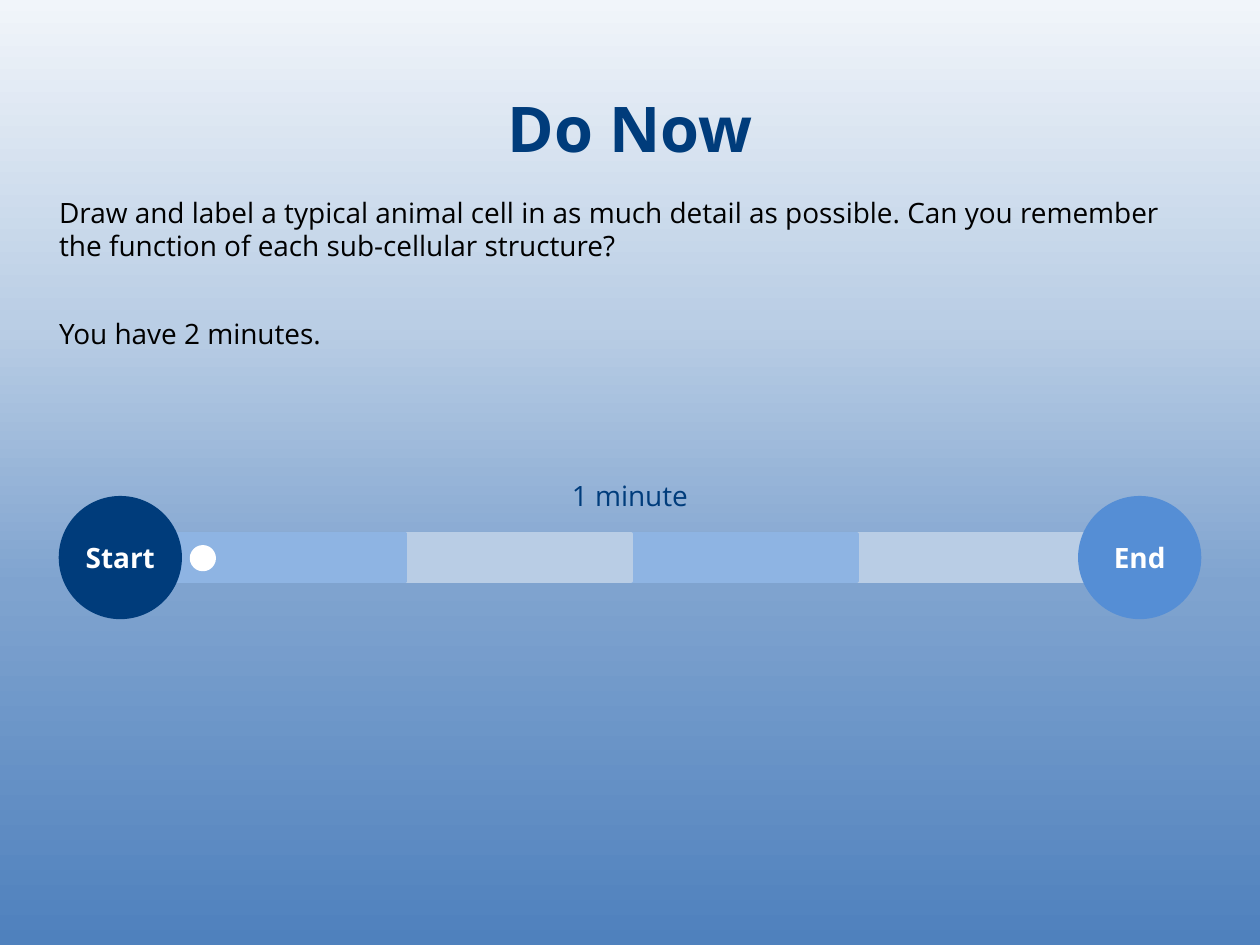
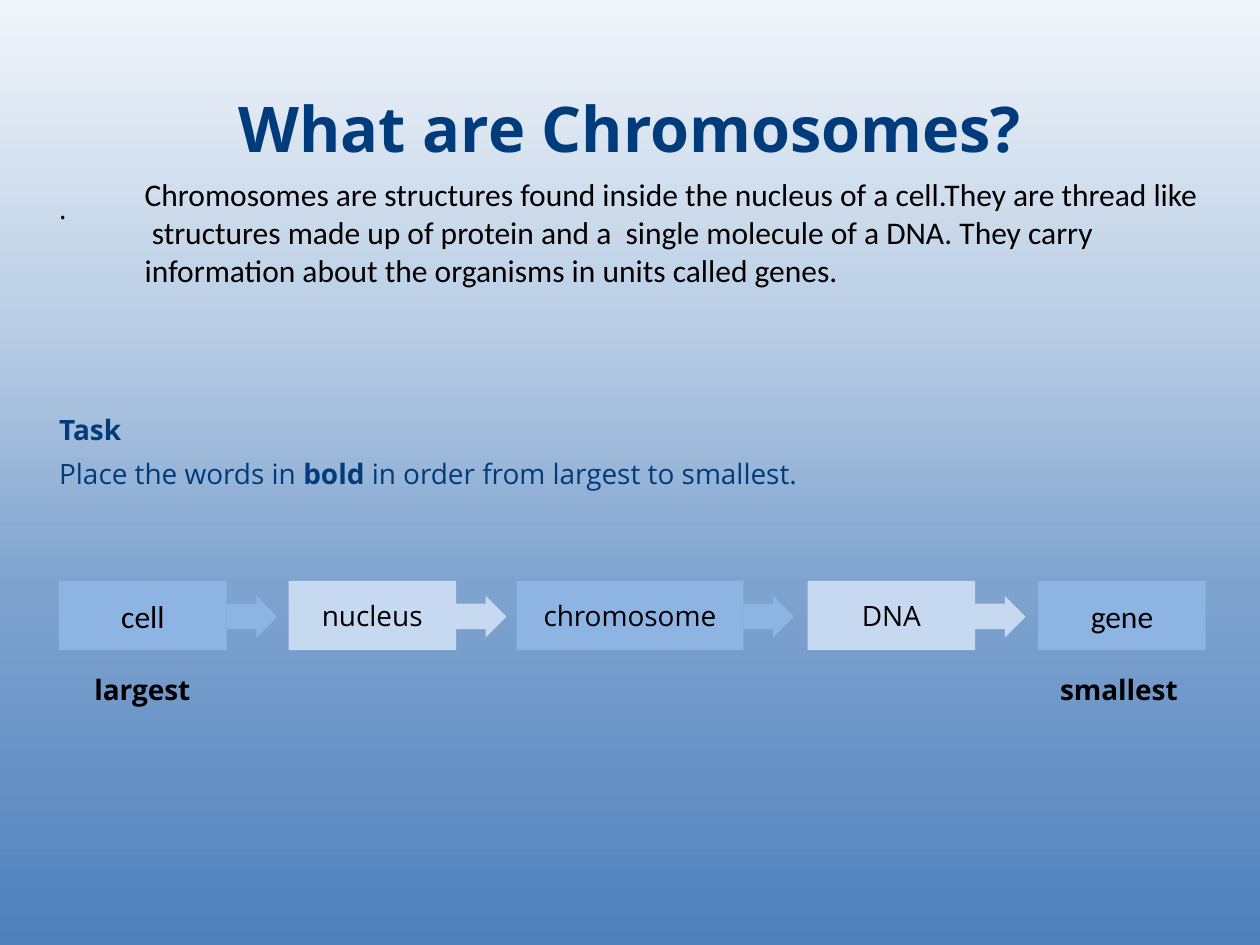
from lxml import etree
from pptx import Presentation
from pptx.dml.color import RGBColor
from pptx.enum import shapes, text
from pptx.oxml.ns import qn
from pptx.util import Inches, Pt

HUES = {
    "navy": "003C7B", "blue": "558ED5", "sky": "8EB4E3", "mist": "B9CDE5",
    "pale": "C6D9F1", "white": "FFFFFF", "black": "000000",
}
STOPS = [(0, "F1F5FA"), (34, "BACEE5"), (62, "7FA3CF"), (100, "4F81BD")]
SANS, PLAIN = "Open Sans", "Calibri"
FORM = shapes.MSO_SHAPE
MID = text.PP_ALIGN.CENTER


def hue(name):
    return RGBColor.from_string(HUES[name])


def paint(master):
    """Give every slide the same vertical gradient."""
    fill = master.background.fill
    fill.gradient()
    fill.gradient_angle = 270
    ramp = master.element.xpath(".//p:bg//a:gsLst")[0]
    for stop in list(ramp):
        ramp.remove(stop)
    for place, tone in STOPS:
        stop = etree.SubElement(ramp, qn("a:gs"), pos=str(place * 1000))
        etree.SubElement(stop, qn("a:srgbClr"), val=tone)


def style(para, size=16, face=SANS, tone="black", bold=False, align=None, after=0):
    font = para.font
    font.size, font.name, font.bold = Pt(size), face, bold
    font.color.rgb = hue(tone)
    para.alignment = align
    para.space_after = Pt(after)


def write(slide, box, lines, pad=0):
    """Add a text box; each line is (words, style options)."""
    frame = slide.shapes.add_textbox(*map(Inches, box)).text_frame
    frame.word_wrap = True
    frame.margin_left = frame.margin_right = Inches(pad)
    for i, (words, opts) in enumerate(lines):
        para = frame.add_paragraph() if i else frame.paragraphs[0]
        para.text = words
        style(para, **opts)
    return frame


def draw(slide, form, box, tone, edge=True):
    item = slide.shapes.add_shape(form, *map(Inches, box))
    item.shadow.inherit = False
    item.fill.solid()
    item.fill.fore_color.rgb = hue(tone)
    if edge:
        item.line.color.rgb = hue(tone)
        item.line.width = Pt(2)
    else:
        item.line.fill.background()
    return item


def title(slide, words):
    write(slide, (0, 0.66, 10, 0.68),
          [(words, dict(size=36, tone="navy", bold=True, align=MID))], 0.1)


def label(slide, box, words, tone, bold=True):
    write(slide, box, [(words, dict(tone=tone, bold=bold, align=MID, after=6))])


def timer(slide, box):
    """Striped bar between a start and an end disc."""
    x, y, w, disc = box
    bar, wide = 0.37, 1.28
    top = y + (disc - bar) / 2

    # Stripes, with the outer ends tucked under the discs
    edges = [x + d for d in (0.88, 2.74, 4.53, 6.32, 8.16)]
    for i in reversed(range(4)):
        tone = "mist" if i % 2 else "sky"
        draw(slide, FORM.RECTANGLE, (edges[i], top, edges[i + 1] - edges[i], bar), tone)

    # Discs and their words
    for words, left, tone in (("Start", x, "navy"), ("End", x + w - disc, "blue")):
        draw(slide, FORM.OVAL, (left, y, disc, disc), tone)
        label(slide, (left + (disc - wide) / 2, top, wide, bar), words, "white")

    # Marker and halfway label
    draw(slide, FORM.OVAL, (x + 1.04, y + 0.39, 0.18, 0.18), "white")
    label(slide, (x + (w - wide) / 2, y - 0.2, wide, bar), "1 minute", "navy", False)


def chain(slide, box):
    """Row of words joined by arrows, largest to smallest."""
    x, y, w, h = box
    steps = [
        ("cell", 0, 1.33), ("nucleus", 1.82, 1.33), ("chromosome", 3.63, 1.8),
        ("DNA", 5.94, 1.33), ("gene", 7.77, 1.33),
    ]
    for i, (words, left, wide) in enumerate(steps):
        tone = "pale" if i % 2 else "sky"
        tile = draw(slide, FORM.RECTANGLE, (x + left, y, wide, h), tone, False)
        tile.text_frame.vertical_anchor = text.MSO_ANCHOR.MIDDLE
        para = tile.text_frame.paragraphs[0]
        para.text = words
        if i in (0, len(steps) - 1):
            style(para, 18, PLAIN, align=MID)
        else:
            style(para, align=MID)
        if i < len(steps) - 1:
            tip = x + left + wide
            arrow = draw(slide, FORM.RIGHT_ARROW, (tip, y + 0.12, 0.4, 0.33), tone, False)
            arrow.adjustments[0] = 0.6
            draw(slide, FORM.RECTANGLE, (tip, y + 0.18, 0.28, 0.2), tone, False)

    # Captions under both ends
    for words, left in (("largest", x), ("smallest", x + w - 1.35)):
        label(slide, (left, y + 0.68, 1.32, 0.37), words, "black")


def starter(slide):
    title(slide, "Do Now")
    write(slide, (0.47, 1.5, 9.06, 1.35), [
        ("Draw and label a typical animal cell in as much detail as possible. "
         "Can you remember the function of each sub-cellular structure?", dict(after=31)),
        ("You have 2 minutes.", dict(after=6)),
    ])
    timer(slide, (0.48, 3.95, 9.04, 0.95))


def lesson(slide):
    title(slide, "What are Chromosomes?")

    # Task, with one bold word
    frame = write(slide, (0.47, 1.47, 9.06, 2.46), [
        (".", dict(after=107)),
        ("Task", dict(tone="navy", bold=True, after=6)),
        ("", dict(tone="navy", after=6)),
    ])
    for words in ("Place the words in ", "bold", " in order from largest to smallest."):
        run = frame.paragraphs[-1].add_run()
        run.text = words
        run.font.bold = words == "bold"

    chain(slide, (0.47, 4.61, 9.1, 0.55))

    # Definition
    look = dict(size=18, face=PLAIN)
    write(slide, (1.05, 1.34, 8.92, 1.3), [
        ("Chromosomes are structures found inside the nucleus of a cell."
         "They are thread like", look),
        (" structures made up of protein and a  single molecule of a DNA. "
         "They carry information about the organisms in units called genes.", look),
    ], 0.1)


def main():
    deck = Presentation()
    deck.slide_width, deck.slide_height = Inches(10), Inches(7.5)
    paint(deck.slide_master)
    for build in (starter, lesson):
        build(deck.slides.add_slide(deck.slide_layouts[6]))
    deck.save("out.pptx")


if __name__ == "__main__":
    main()
